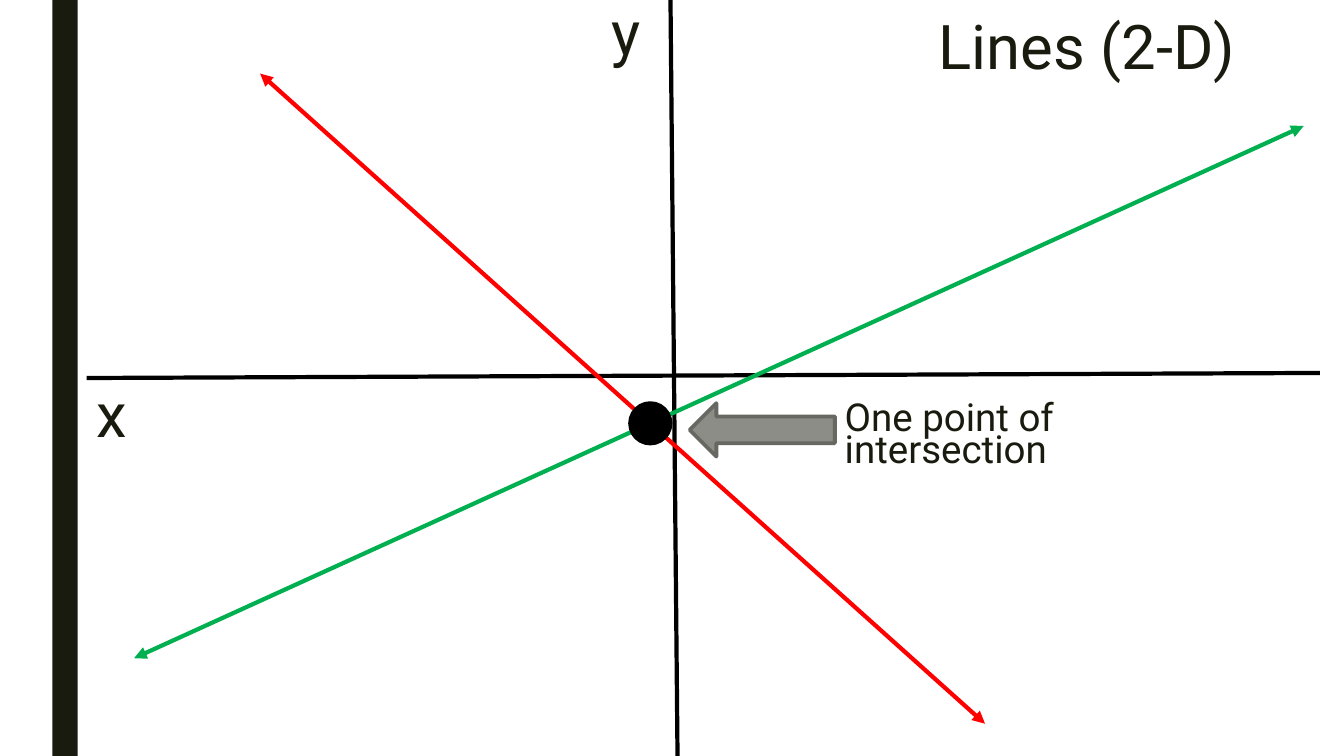
import pptx
import pptx.util
import pptx.dml.color
import pptx.enum.shapes
import pptx.enum.text
import pptx.oxml
import pptx.oxml.ns
from pptx.util import Inches

COLORS = {
    "ink": "191B0E",
    "black": "000000",
    "red": "FF0000",
    "green": "00B050",
    "gray": "8C8D86",
    "gray_edge": "686863",
}
SHAPES = pptx.enum.shapes.MSO_SHAPE


def rgb(name):
    return pptx.dml.color.RGBColor.from_string(COLORS[name])


def place(part, box):
    part.left, part.top, part.width, part.height = map(Inches, box)


def write(part, text, size=44, spacing=0.89):
    frame = part.text_frame
    frame.word_wrap = True
    frame.auto_size = pptx.enum.text.MSO_AUTO_SIZE.NONE
    frame.vertical_anchor = pptx.enum.text.MSO_ANCHOR.MIDDLE
    paragraph = frame.paragraphs[0]
    paragraph.alignment = pptx.enum.text.PP_ALIGN.LEFT
    paragraph.line_spacing = spacing
    run = paragraph.add_run()
    run.text = text
    run.font.name = "Roboto"
    run.font.size = pptx.util.Pt(size)
    run.font.color.rgb = rgb("ink")


def add_label(slide, box, text, size=44, spacing=0.89):
    label = slide.shapes.add_textbox(*map(Inches, box))
    write(label, text, size, spacing)


def add_solid(slide, kind, box, fill, edge=None):
    solid = slide.shapes.add_shape(kind, *map(Inches, box))
    solid.shadow.inherit = False
    solid.fill.solid()
    solid.fill.fore_color.rgb = rgb(fill)
    if edge:
        solid.line.color.rgb = rgb(edge)
        solid.line.width = pptx.util.Pt(2.75)
    else:
        solid.line.fill.background()


def add_line(slide, start, end, color, arrows=False):
    line = slide.shapes.add_connector(
        pptx.enum.shapes.MSO_CONNECTOR.STRAIGHT, *map(Inches, start + end))
    line.line.color.rgb = rgb(color)
    line.line.width = pptx.util.Pt(3)
    properties = line.element.spPr
    if arrows:
        outline = properties.find(pptx.oxml.ns.qn("a:ln"))
        for tag in ("a:headEnd", "a:tailEnd"):
            arrowhead = pptx.oxml.xmlchemy.OxmlElement(tag)
            arrowhead.set("type", "triangle")
            outline.append(arrowhead)
    properties.append(pptx.oxml.xmlchemy.OxmlElement("a:effectLst"))


def add_heading(slide, box):
    title = slide.shapes.title
    place(title, box)
    write(title, "Lines (2-D)")


def add_axes(slide, box):
    left, top, width, height = box
    add_line(slide, (left + 5.79, top), (left + 5.86, top + height), "black")
    add_line(slide, (left, top + 3.75), (left + width, top + 3.7), "black")
    add_label(slide, (left, top + 3.75, 0.47, 0.78), "x")
    add_label(slide, (left + 5.11, top - 0.04, 0.47, 0.78), "y")


def add_crossing_lines(slide, box):
    left, top, width, height = box
    add_line(slide, (left + 1.25, top), (left + 8.44, top + height), "red", True)
    add_line(slide, (left + width, top + 0.52), (left, top + 5.8), "green", True)


def add_intersection(slide, box):
    left, top, width, height = box
    add_solid(slide, SHAPES.FLOWCHART_CONNECTOR, (left, top, 0.4, 0.4), "black", "black")
    add_solid(slide, SHAPES.LEFT_ARROW, (left + 0.59, top, 1.44, 0.53), "gray", "gray_edge")
    add_label(slide, (left + 2.03, top - 0.05, width - 2.03, height),
              "One point of intersection", 27.5, 0.69)


def main():
    deck = pptx.Presentation()
    deck.slide_width, deck.slide_height = Inches(13.33), Inches(7.5)
    slide = deck.slides.add_slide(deck.slide_layouts[5])
    add_solid(slide, SHAPES.RECTANGLE, (0.52, 0, 0.25, 7.5), "ink")
    add_heading(slide, (9.21, 0.1, 3.17, 0.78))
    add_axes(slide, (0.86, 0, 12.23, 7.5))
    add_crossing_lines(slide, (1.33, 0.73, 11.6, 6.45))
    add_intersection(slide, (6.25, 4, 4.36, 0.78))
    deck.save("out.pptx")


if __name__ == "__main__":
    main()
